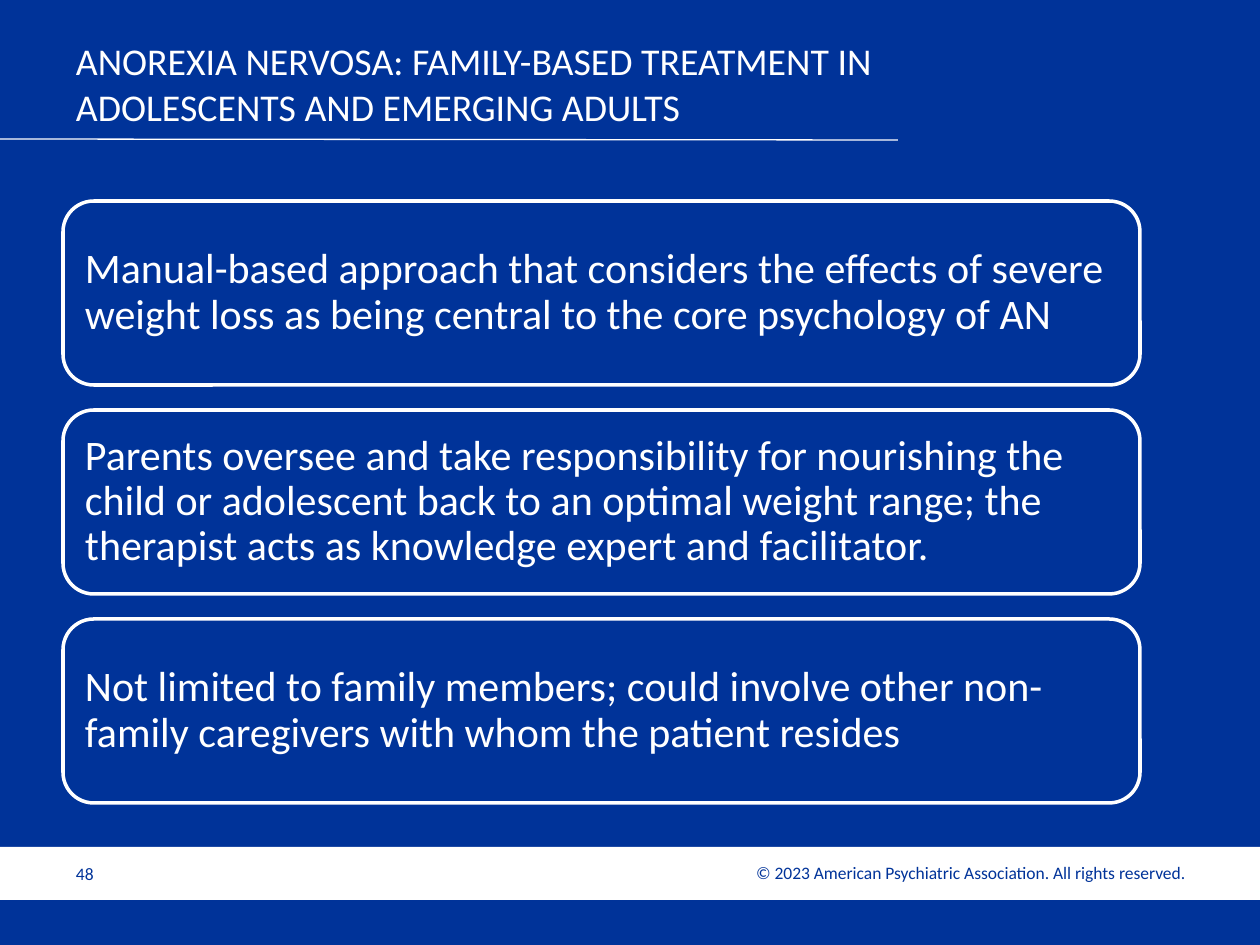
from pptx import Presentation
from pptx.dml.color import RGBColor
from pptx.enum.shapes import MSO_CONNECTOR, MSO_SHAPE
from pptx.enum.text import MSO_ANCHOR, PP_ALIGN
from pptx.oxml.ns import qn
from pptx.util import Emu, Pt
from lxml.etree import SubElement

TITLE = "ANOREXIA NERVOSA: FAMILY-BASED TREATMENT IN ADOLESCENTS AND EMERGING ADULTS"
CARDS = [
    "Manual-based approach that considers the effects of severe weight loss as being central to the core psychology of AN",
    "Parents oversee and take responsibility for nourishing the child or adolescent back to an optimal weight range; the therapist acts as knowledge expert and facilitator.",
    "Not limited to family members; could involve other non-family caregivers with whom the patient resides",
]
FOOTER = [
    ("48", (63, 847, 293, 53), PP_ALIGN.LEFT),
    ("© 2023 American Psychiatric Association. All rights reserved.", (653, 855, 545, 36), PP_ALIGN.RIGHT),
]

THEME = {
    "blue": RGBColor(0x00, 0x33, 0x99),
    "white": RGBColor(0xFF, 0xFF, 0xFF),
    "font": "Calibri",
    "title": Pt(21.6),
    "card": Pt(24),
    "footer": Pt(10),
    "rule": Pt(0.75),
    "outline": Pt(2),
}
PX = 914400 / 126
SLIDE = (1260, 945)
TITLE_BOX = (63, 43, 835, 81)
FOOTER_BAND = (0, 847, 1260, 53)
RULE = (0, 139, 898, 140)
CARD_LEFT, CARD_TOP, CARD_WIDTH, CARD_HEIGHT, CARD_GAP = 63, 201, 1077, 184, 25
INSET = 13


def px(*lengths):
    return [Emu(round(length * PX)) for length in lengths]


def write(box, text, size, color, align=PP_ALIGN.LEFT, spacing=1.0, inset=(INSET, 6)):
    frame = box.text_frame
    side, edge = px(*inset)
    frame_format = {
        "word_wrap": True,
        "vertical_anchor": MSO_ANCHOR.MIDDLE,
        "margin_left": side,
        "margin_right": side,
        "margin_top": edge,
        "margin_bottom": edge,
    }
    for name, value in frame_format.items():
        setattr(frame, name, value)
    para = frame.paragraphs[0]
    para.alignment, para.line_spacing = align, spacing
    span = para.add_run()
    span.text = text
    for name, value in {"name": THEME["font"], "size": THEME[size], "bold": False}.items():
        setattr(span.font, name, value)
    span.font.color.rgb = THEME[color]


def add_panel(page, kind, place, fill, line=None):
    panel = page.shapes.add_shape(kind, *px(*place))
    panel.shadow.inherit = False
    panel.fill.solid()
    panel.fill.fore_color.rgb = THEME[fill]
    if line:
        panel.line.color.rgb = THEME[line]
        panel.line.width = THEME["outline"]
    else:
        panel.line.fill.background()
    return panel


def add_rule(page):
    rule = page.shapes.add_connector(MSO_CONNECTOR.STRAIGHT, *px(*RULE))
    rule.line.color.rgb = THEME["white"]
    rule.line.width = THEME["rule"]
    SubElement(rule._element.spPr, qn("a:effectLst"))


def main():
    deck = Presentation()
    deck.slide_width, deck.slide_height = px(*SLIDE)
    page = deck.slides.add_slide(deck.slide_layouts[5])
    page.background.fill.solid()
    page.background.fill.fore_color.rgb = THEME["blue"]

    title = page.shapes.title
    for name, value in zip(("left", "top", "width", "height"), px(*TITLE_BOX)):
        setattr(title, name, value)
    write(title, TITLE, "title", "white")

    add_panel(page, MSO_SHAPE.RECTANGLE, FOOTER_BAND, "white")
    add_rule(page)
    for text, place, align in FOOTER:
        write(page.shapes.add_textbox(*px(*place)), text, "footer", "blue", align)

    for index, text in enumerate(CARDS):
        top = CARD_TOP + index * (CARD_HEIGHT + CARD_GAP)
        place = (CARD_LEFT, top, CARD_WIDTH, CARD_HEIGHT)
        card = add_panel(page, MSO_SHAPE.ROUNDED_RECTANGLE, place, "blue", "white")
        write(card, text, "card", "white", spacing=0.9, inset=(INSET, INSET))

    deck.save("out.pptx")


if __name__ == "__main__":
    main()
